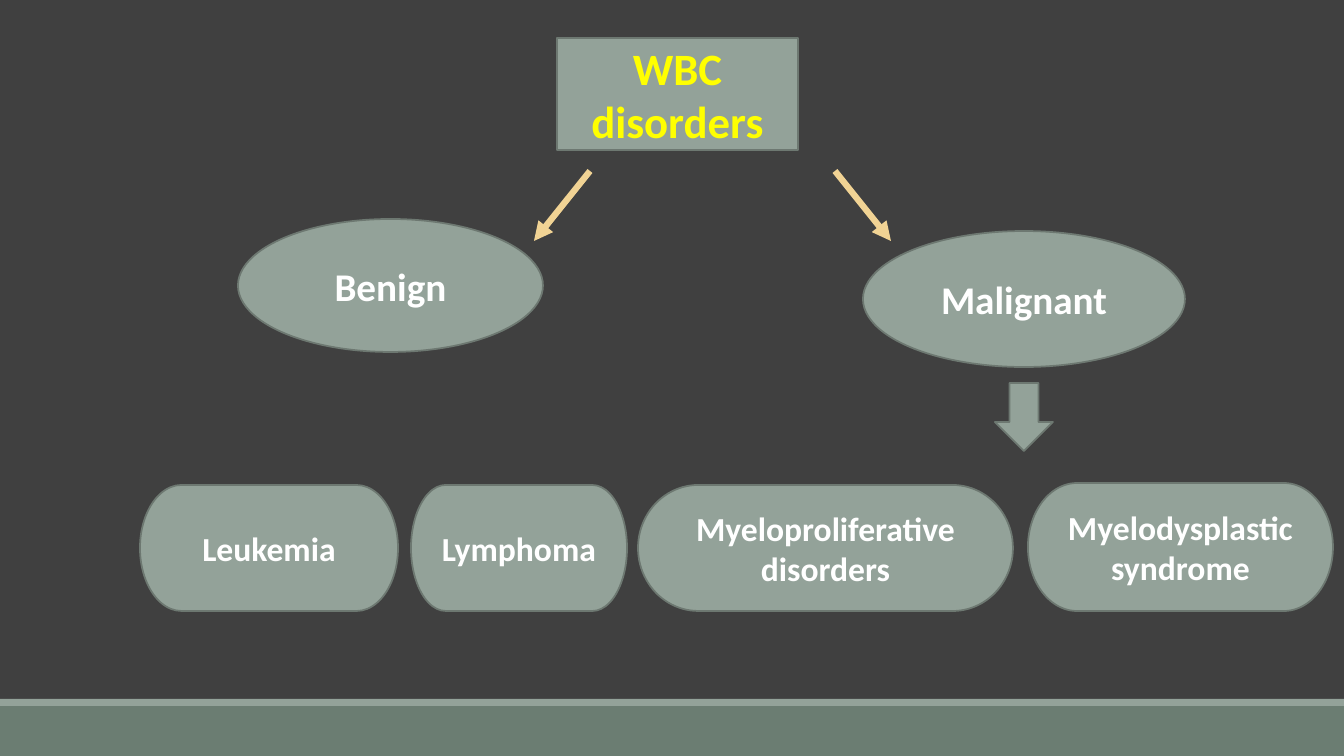
from lxml import etree
from pptx import Presentation
from pptx import util as u
from pptx.dml.color import RGBColor
from pptx.enum import shapes, text
from pptx.oxml import ns

PX = 914400 / 100.8
SLIDE_W, SLIDE_H = 1344, 756

BACKGROUND = RGBColor(0x40, 0x40, 0x40)
SAGE = RGBColor(0x93, 0xA2, 0x99)
SAGE_EDGE = RGBColor(0x6D, 0x78, 0x71)
FOOTER_GREEN = RGBColor(0x6B, 0x7D, 0x72)
SAND = RGBColor(0xF1, 0xD3, 0x94)
YELLOW = RGBColor(0xFF, 0xFF, 0x00)
WHITE = RGBColor(0xFF, 0xFF, 0xFF)

KIND = shapes.MSO_SHAPE


def px(*lengths):
    return [u.Emu(round(length * PX)) for length in lengths]


def add_filled(slide, kind, box, fill=SAGE, edge=SAGE_EDGE):
    block = slide.shapes.add_shape(kind, *px(*box))
    block.shadow.inherit = False
    block.fill.solid()
    block.fill.fore_color.rgb = fill
    if edge is None:
        block.line.fill.background()
    else:
        block.line.color.rgb = edge
        block.line.width = u.Pt(1.25)
    return block


def add_node(slide, kind, box, label, size, color=WHITE):
    node = add_filled(slide, kind, box)
    frame = node.text_frame
    frame.word_wrap = True
    frame.vertical_anchor = text.MSO_ANCHOR.MIDDLE
    paragraph = frame.paragraphs[0]
    paragraph.alignment = text.PP_ALIGN.CENTER
    run = paragraph.add_run()
    run.text = label
    for name, value in {"name": "Calibri", "size": u.Pt(size), "bold": True}.items():
        setattr(run.font, name, value)
    run.font.color.rgb = color


def add_branch_arrow(slide, start, end):
    arrow = slide.shapes.add_connector(
        shapes.MSO_CONNECTOR.STRAIGHT, *px(*start, *end))
    arrow.line.color.rgb = SAND
    arrow.line.width = u.Pt(4.5)
    etree.SubElement(arrow.line._get_or_add_ln(), ns.qn("a:tailEnd"), type="triangle")
    etree.SubElement(arrow._element.spPr, ns.qn("a:effectLst"))


def add_footer(slide, left, top, width, height):
    band = 7
    add_filled(slide, KIND.RECTANGLE, (left, top + band, width, height - band),
               FOOTER_GREEN, None)
    add_filled(slide, KIND.RECTANGLE, (left, top, width, band), SAGE, None)


def add_classification(slide, left, top, width, height):
    # Root and its two branches
    add_node(slide, KIND.RECTANGLE, (left + 320, top, 241, 112),
             "WBC disorders", 32, YELLOW)
    add_node(slide, KIND.OVAL, (left + 1, top + 181, 305, 133), "Benign", 28)
    add_node(slide, KIND.OVAL, (left + width - 322, top + 193, 322, 136),
             "Malignant", 28)

    # Arrows mirrored about one axis
    axis = left + 475.5
    for side in (-1, 1):
        add_branch_arrow(slide, (axis + side * 122.5, top + 133),
                         (axis + side * 178.5, top + 203))

    # Down to the malignant types
    add_filled(slide, KIND.DOWN_ARROW,
               (left + width - 190, top + height - 68, 58, 68))


def add_malignant_types(slide, left, top, width, height):
    for label, offset, node_width, rise in (
            ("Leukemia", 0, 258, 0),
            ("Lymphoma", 271, 216, 0),
            ("Myeloproliferative disorders", 498, 375, 0),
            ("Myelodysplastic syndrome", width - 305, 305, 2)):
        add_node(slide, KIND.FLOWCHART_TERMINATOR,
                 (left + offset, top - rise, node_width, height + rise), label, 24)


def main():
    deck = Presentation()
    deck.slide_width, deck.slide_height = px(SLIDE_W, SLIDE_H)
    slide = deck.slides.add_slide(deck.slide_layouts[6])
    slide.background.fill.solid()
    slide.background.fill.fore_color.rgb = BACKGROUND

    add_footer(slide, 0, 699, SLIDE_W, 57)
    add_classification(slide, 237, 38, 948, 413)
    add_malignant_types(slide, 140, 485, 1193, 126)
    deck.save("out.pptx")


if __name__ == "__main__":
    main()
